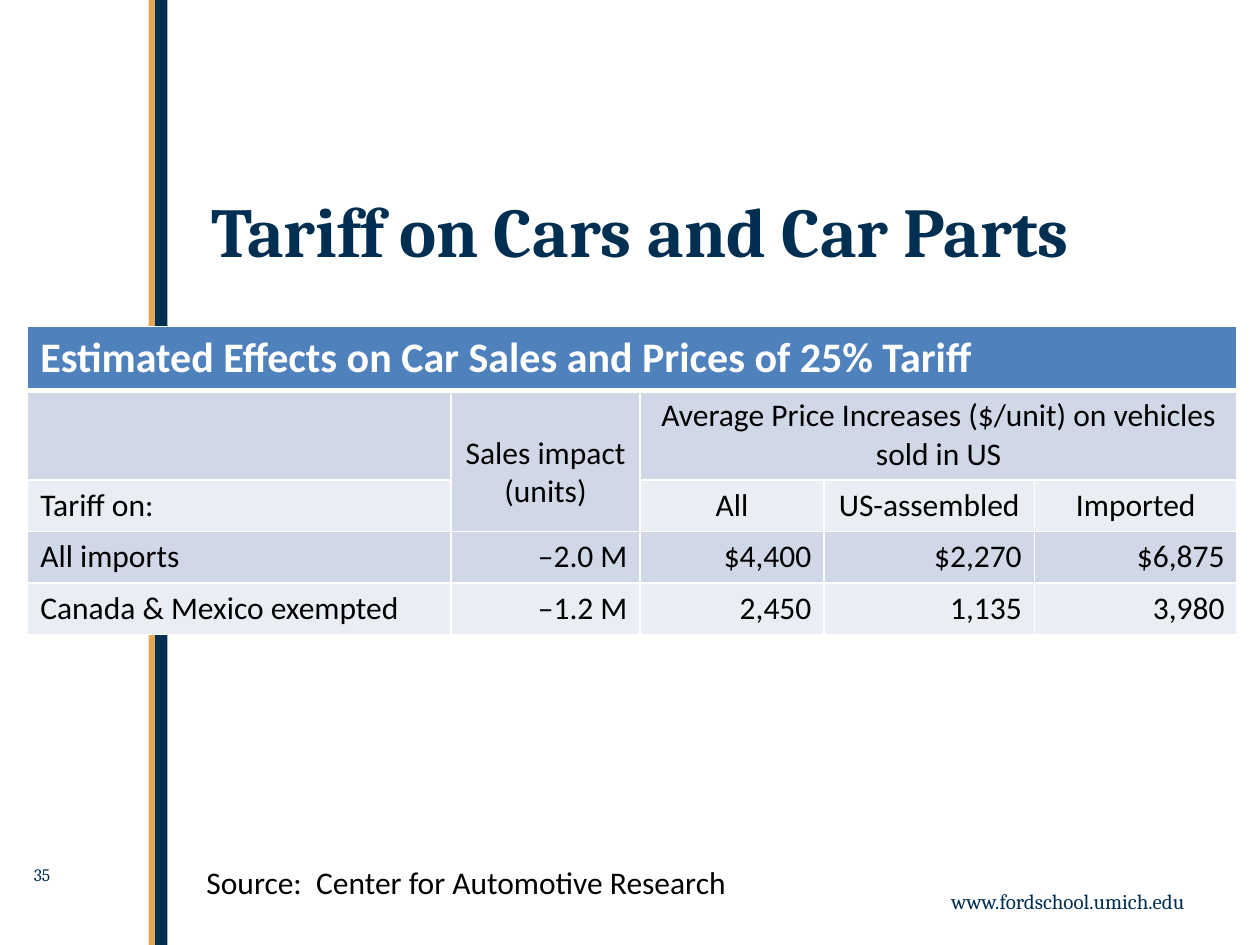
"""Build a slide with a table of estimated car tariff effects."""
from dataclasses import dataclass

import lxml.etree
import pptx
import pptx.dml.color
import pptx.enum.shapes
import pptx.enum.text
import pptx.oxml.ns
import pptx.util

Inches = pptx.util.Inches
Pt = pptx.util.Pt
Color = pptx.dml.color.RGBColor
Align = pptx.enum.text.PP_ALIGN

NAVY = Color(0x00, 0x2F, 0x52)
GOLD = Color(0xE3, 0xA8, 0x56)
BLUE = Color(0x4F, 0x81, 0xBD)
DARK = Color(0xD0, 0xD8, 0xE8)
LIGHT = Color(0xE9, 0xED, 0xF4)
WHITE = Color(0xFF, 0xFF, 0xFF)
BLACK = Color(0x00, 0x00, 0x00)


@dataclass
class Style:
    size: float
    name: str
    color: Color
    bold: bool = False
    align: Align = Align.LEFT


@dataclass
class Bar:
    left: float
    width: float
    color: Color


@dataclass
class Label:
    text: str
    left: float
    top: float
    width: float
    height: float
    style: Style


@dataclass
class Row:
    height: float
    fill: Color
    texts: tuple
    aligns: tuple


LEFT, MID, RIGHT = Align.LEFT, Align.CENTER, Align.RIGHT
HEADS = (LEFT,) + (MID,) * 4
DATA = (LEFT,) + (RIGHT,) * 4

BARS = [Bar(1.23, 0.1, NAVY), Bar(1.18, 0.05, GOLD)]

LABELS = [
    Label("www.fordschool.umich.edu", 7, 7, 2.5, 0.3,
          Style(12, "Cambria", NAVY, align=RIGHT)),
    Label("35", 0.17, 6.81, 0.92, 0.34, Style(10, "Cambria", NAVY)),
    Label("Source:  Center for Automotive Research", 1.54, 6.8, 4.91, 0.4,
          Style(18, "Calibri", BLACK)),
    Label("Tariff on Cars and Car Parts", 1.58, 1.44, 7.92, 1.23,
          Style(40, "Cambria", NAVY, bold=True)),
]

WIDTHS = [3.36, 1.5, 1.46, 1.67, 1.61]
ROWS = [
    Row(0.49, BLUE,
        ("Estimated Effects on Car Sales and Prices of 25% Tariff",
         "", "", "", ""), HEADS),
    Row(0.71, DARK,
        ("", "Sales impact (units)",
         "Average Price Increases ($/unit) on vehicles sold in US", "", ""),
        HEADS),
    Row(0.41, LIGHT,
        ("Tariff on:", "", "All", "US-assembled", "Imported"), HEADS),
    Row(0.41, DARK,
        ("All imports", "–2.0 M", "$4,400", "$2,270", "$6,875"), DATA),
    Row(0.41, LIGHT,
        ("Canada & Mexico exempted", "–1.2 M", "2,450", "1,135", "3,980"),
        DATA),
]
SPANS = [((0, 0), (0, 4)), ((1, 1), (2, 1)), ((1, 2), (1, 4))]


def write(frame, text: str, style: Style) -> None:
    para = frame.paragraphs[0]
    para.text = text
    para.alignment = style.align
    font = para.font
    font.size = Pt(style.size)
    font.name = style.name
    font.bold = style.bold
    font.color.rgb = style.color


def add_bar(slide, bar: Bar) -> None:
    shape = slide.shapes.add_shape(
        pptx.enum.shapes.MSO_SHAPE.RECTANGLE,
        Inches(bar.left), 0, Inches(bar.width), Inches(7.5))
    shape.shadow.inherit = False
    shape.fill.solid()
    shape.fill.fore_color.rgb = bar.color
    shape.line.fill.background()


def add_label(slide, label: Label) -> None:
    box = slide.shapes.add_textbox(
        Inches(label.left), Inches(label.top),
        Inches(label.width), Inches(label.height))
    box.text_frame.word_wrap = True
    write(box.text_frame, label.text, label.style)


def add_edge(cell, side: str, width: float) -> None:
    qn = pptx.oxml.ns.qn
    props = cell._tc.get_or_add_tcPr()
    line = lxml.etree.SubElement(props, qn(f"a:ln{side}"), w=str(Pt(width)))
    fill = lxml.etree.SubElement(line, qn("a:solidFill"))
    lxml.etree.SubElement(fill, qn("a:srgbClr"), val=str(WHITE))


def add_grid(slide) -> None:
    grid = slide.shapes.add_table(
        len(ROWS), len(WIDTHS), Inches(0.22), Inches(2.59),
        Inches(sum(WIDTHS)), Inches(sum(row.height for row in ROWS))).table
    grid.first_row = grid.horz_banding = False
    for col, width in zip(grid.columns, WIDTHS):
        col.width = Inches(width)
    for i, row in enumerate(ROWS):
        grid.rows[i].height = Inches(row.height)
        edges = {"L": 1, "R": 1, "T": 3 if i == 1 else 1,
                 "B": 3 if i == 0 else 1}
        size, color = (24, WHITE) if i == 0 else (18, BLACK)
        for j, (text, align) in enumerate(zip(row.texts, row.aligns)):
            cell = grid.cell(i, j)
            for side, width in edges.items():
                add_edge(cell, side, width)
            cell.fill.solid()
            cell.fill.fore_color.rgb = row.fill
            if text:
                write(cell.text_frame, text,
                      Style(size, "Calibri", color, i == 0, align))
    for first, last in SPANS:
        grid.cell(*first).merge(grid.cell(*last))
    grid.cell(1, 1).margin_top = Inches(0.35)


def main() -> None:
    deck = pptx.Presentation()
    deck.slide_width, deck.slide_height = Inches(10), Inches(7.5)
    slide = deck.slides.add_slide(deck.slide_layouts[6])
    for bar in BARS:
        add_bar(slide, bar)
    add_grid(slide)
    for label in LABELS:
        add_label(slide, label)
    deck.save("out.pptx")


if __name__ == "__main__":
    main()
